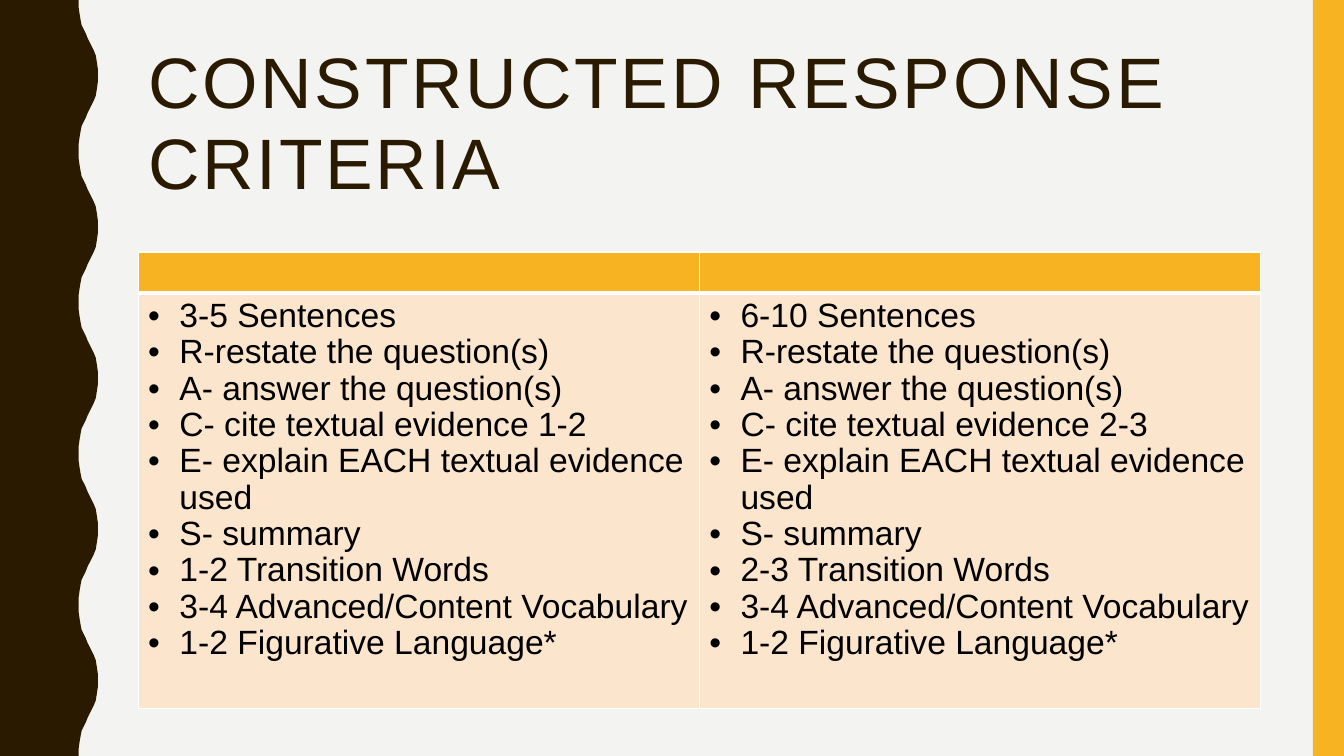
from lxml import etree
from pptx import Presentation
from pptx.dml.color import RGBColor
from pptx.enum.shapes import MSO_SHAPE
from pptx.enum.text import MSO_ANCHOR
from pptx.oxml.ns import qn
from pptx.util import Inches, Pt

RECTANGLE = MSO_SHAPE.RECTANGLE
MIDDLE = MSO_ANCHOR.MIDDLE

PAPER = RGBColor(0xF3, 0xF3, 0xF2)
BROWN = RGBColor(0x2A, 0x1A, 0x00)
GOLD = RGBColor(0xF8, 0xB3, 0x23)
PEACH = RGBColor(0xFC, 0xE5, 0xCD)
BLACK = RGBColor(0x00, 0x00, 0x00)
WHITE = RGBColor(0xFF, 0xFF, 0xFF)

TITLE_FONT = {"name": "Arial", "size": Pt(51)}
BULLET_FONT = {"name": "Arial", "size": Pt(24)}

SLIDE_WIDTH, SLIDE_HEIGHT = 13.33, 7.5
WAVE_PERIOD = 1.5
WAVE_COUNT = 5
# Rising half of one wave: x, y in inches
WAVE_RISE = [(0.78, 0), (0.78, 0.07), (0.79, 0.14), (0.8, 0.2), (0.81, 0.25),
             (0.83, 0.29), (0.85, 0.33), (0.87, 0.38), (0.89, 0.42), (0.91, 0.46),
             (0.93, 0.5), (0.95, 0.55), (0.96, 0.61), (0.97, 0.68), (0.97, 0.75)]

HEADER_HEIGHT, BODY_HEIGHT = 0.41, 4.12
# Sentences, pieces of evidence and transition words asked for in each column
LEVELS = [("3-5", "1-2", "1-2"), ("6-10", "2-3", "2-3")]


def criteria(sentences, evidence, transitions):
    return [
        f"{sentences} Sentences",
        "R-restate the question(s)",
        "A- answer the question(s)",
        f"C- cite textual evidence {evidence}",
        "E- explain EACH textual evidence used",
        "S- summary",
        f"{transitions} Transition Words",
        "3-4 Advanced/Content Vocabulary",
        "1-2 Figurative Language*",
    ]


def paint(shape, color):
    shape.shadow.inherit = False
    shape.fill.solid()
    shape.fill.fore_color.rgb = color
    shape.line.fill.background()


def add_span(para, text, font_values, color):
    span = para.add_run()
    span.text = text
    for name, value in font_values.items():
        setattr(span.font, name, value)
    span.font.color.rgb = color
    return span


def add_wavy_edge(page, left, top, height):
    fall = [(x, WAVE_PERIOD - y) for x, y in reversed(WAVE_RISE[:-1])]
    wave = WAVE_RISE + fall[:-1]
    edge = [(left + x, top + y + number * WAVE_PERIOD)
            for number in range(WAVE_COUNT) for x, y in wave]
    edge += [(left + WAVE_RISE[0][0], top + height), (left, top + height)]
    builder = page.shapes.build_freeform(Inches(left), Inches(top))
    builder.add_line_segments([(Inches(x), Inches(y)) for x, y in edge], close=True)
    paint(builder.convert_to_shape(), BROWN)


def add_side_bar(page, left, top, width, height):
    bar = page.shapes.add_shape(
        RECTANGLE, Inches(left), Inches(top), Inches(width), Inches(height))
    paint(bar, GOLD)


def add_title(page, left, top, width, height):
    box = page.shapes.add_textbox(
        Inches(left), Inches(top), Inches(width), Inches(height))
    frame = box.text_frame
    frame.word_wrap = True
    frame.vertical_anchor = MIDDLE
    para = frame.paragraphs[0]
    para.line_spacing = 0.95
    span = add_span(para, "CONSTRUCTED RESPONSE CRITERIA", TITLE_FONT, BROWN)
    span.font._element.set("spc", "200")


def style_cell(cell, color, bottom, top):
    cell.fill.solid()
    cell.fill.fore_color.rgb = color
    borders = {"a:lnL": 1, "a:lnR": 1, "a:lnT": top, "a:lnB": bottom}
    properties = cell._tc.get_or_add_tcPr()
    # Borders come before the fill
    for position, (tag, points) in enumerate(borders.items()):
        line = etree.Element(qn(tag), w=str(Pt(points)))
        fill = etree.SubElement(line, qn("a:solidFill"))
        etree.SubElement(fill, qn("a:srgbClr"), val=str(WHITE))
        properties.insert(position, line)


def add_bullet(para, text):
    para.line_spacing = 0.97
    properties = para._p.get_or_add_pPr()
    properties.set("marL", str(Inches(0.31)))
    properties.set("indent", str(-Inches(0.31)))
    etree.SubElement(properties, qn("a:buFont"), typeface="Arial")
    etree.SubElement(properties, qn("a:buChar"), char="•")
    add_span(para, text, BULLET_FONT, BLACK)


def add_criteria_table(page, left, top, width):
    table = page.shapes.add_table(
        2, len(LEVELS), Inches(left), Inches(top), Inches(width),
        Inches(HEADER_HEIGHT + BODY_HEIGHT)).table
    for row, height in zip(table.rows, (HEADER_HEIGHT, BODY_HEIGHT)):
        row.height = Inches(height)
    for column, level in enumerate(LEVELS):
        style_cell(table.cell(0, column), GOLD, bottom=3, top=1)
        body = table.cell(1, column)
        style_cell(body, PEACH, bottom=1, top=3)
        for number, text in enumerate(criteria(*level)):
            frame = body.text_frame
            para = frame.add_paragraph() if number else frame.paragraphs[0]
            add_bullet(para, text)


def main():
    deck = Presentation()
    deck.slide_width = Inches(SLIDE_WIDTH)
    deck.slide_height = Inches(SLIDE_HEIGHT)
    page = deck.slides.add_slide(deck.slide_layouts[6])
    page.background.fill.solid()
    page.background.fill.fore_color.rgb = PAPER

    # Decorated edges
    add_wavy_edge(page, 0, 0, SLIDE_HEIGHT)
    add_side_bar(page, 13.02, 0, 0.31, SLIDE_HEIGHT)

    # Content
    add_title(page, 1.37, 0.42, 11.13, 1.63)
    add_criteria_table(page, 1.37, 2.5, 11.13)

    deck.save("out.pptx")


if __name__ == "__main__":
    main()
